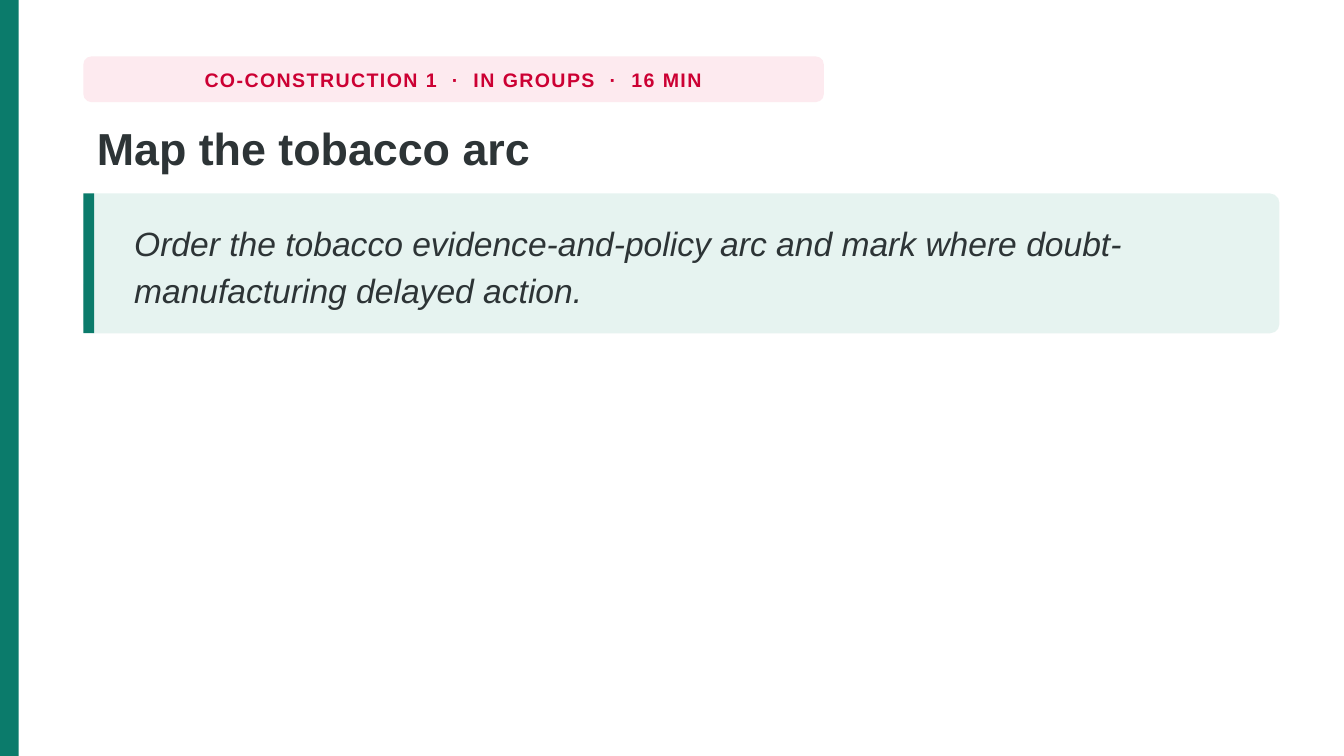
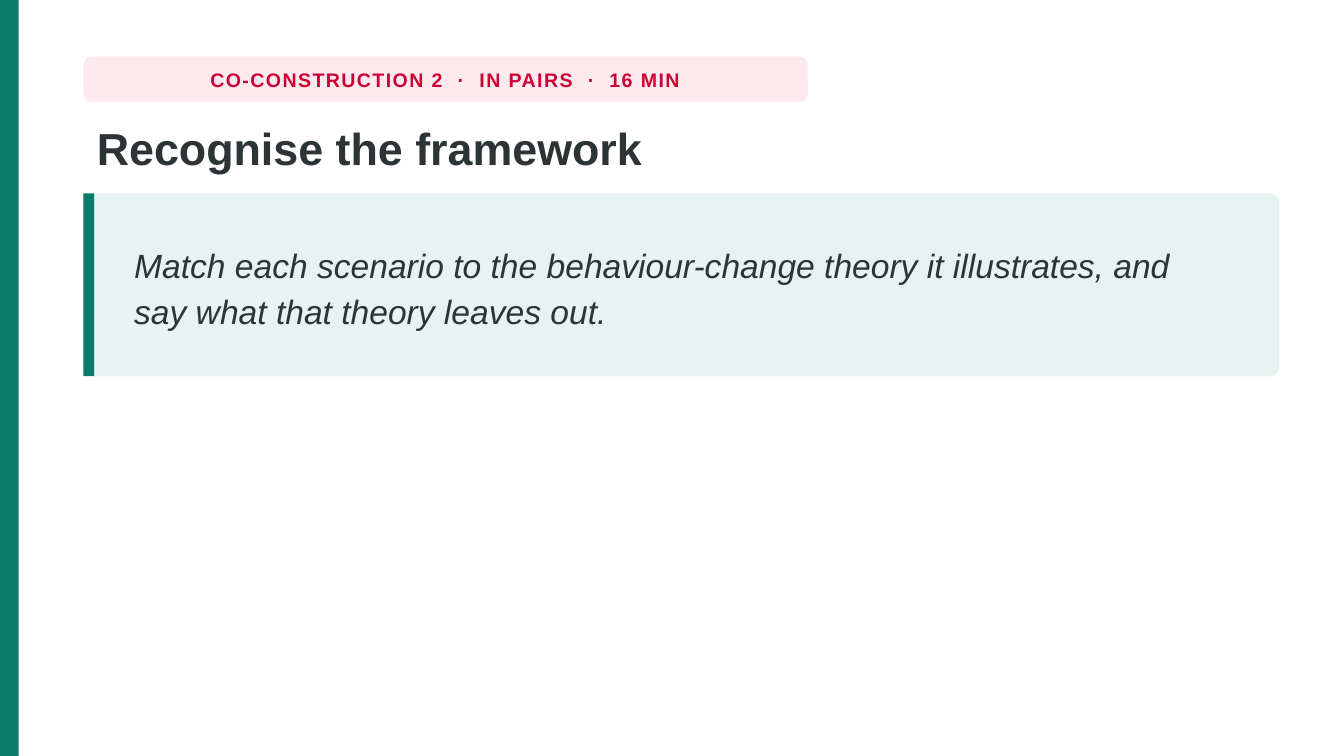
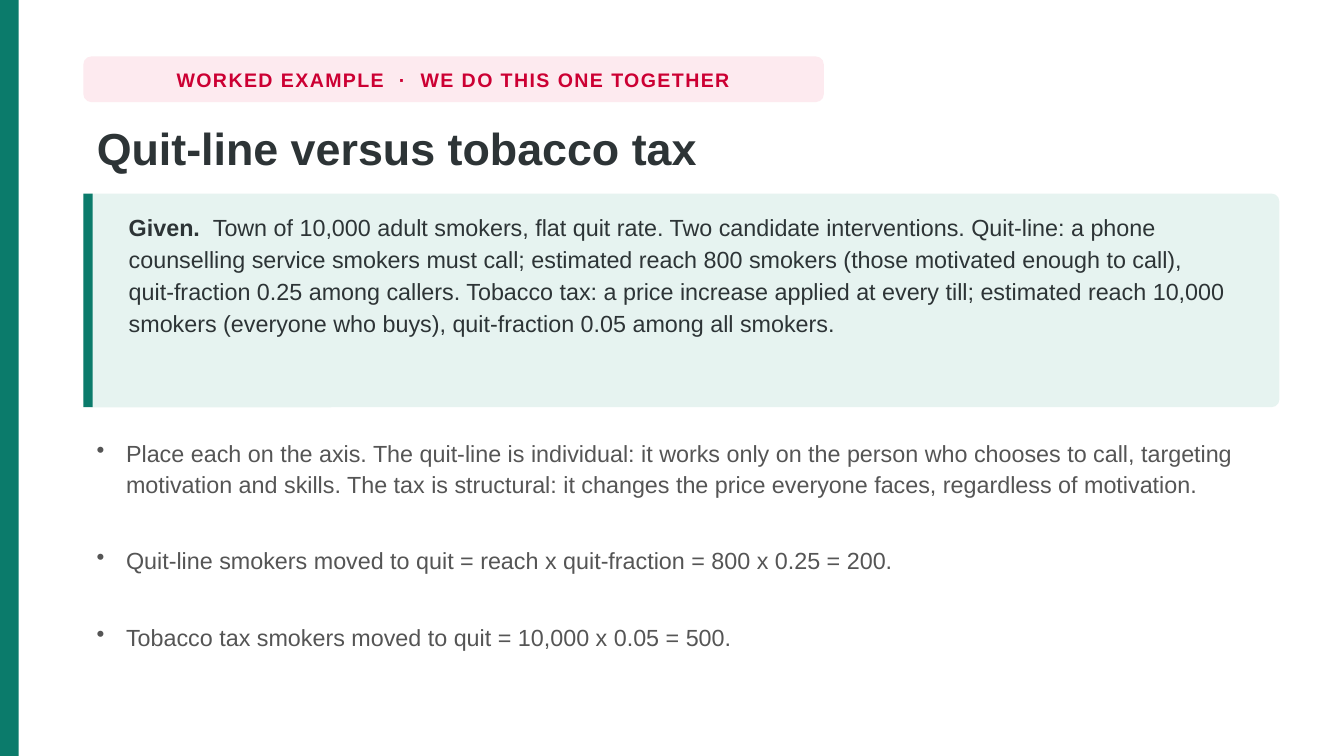
from lxml.etree import SubElement
from pptx import Presentation
from pptx.dml.color import RGBColor
from pptx.enum.shapes import MSO_SHAPE
from pptx.enum.text import MSO_ANCHOR, MSO_AUTO_SIZE, PP_ALIGN
from pptx.oxml.ns import qn
from pptx.util import Inches, Pt

GREEN = RGBColor(0x0B, 0x7B, 0x6B)
MINT = RGBColor(0xE6, 0xF3, 0xF0)
PINK = RGBColor(0xFD, 0xEA, 0xEF)
CRIMSON = RGBColor(0xCC, 0x00, 0x33)
INK = RGBColor(0x2D, 0x34, 0x36)
GREY = RGBColor(0x55, 0x55, 0x55)

TASKS = [
    {
        "tags": ["CO-CONSTRUCTION 1", "IN GROUPS", "16 MIN"],
        "tag_width": 5.51,
        "title": "Map the tobacco arc",
        "card": "prompt",
        "card_height": 1.04,
        "spans": [("Order the tobacco evidence-and-policy arc and mark where "
                   "doubt-manufacturing delayed action.", False)],
    },
    {
        "tags": ["CO-CONSTRUCTION 2", "IN PAIRS", "16 MIN"],
        "tag_width": 5.39,
        "title": "Recognise the framework",
        "card": "prompt",
        "card_height": 1.36,
        "spans": [("Match each scenario to the behaviour-change theory it illustrates, "
                   "and say what that theory leaves out.", False)],
    },
    {
        "tags": ["WORKED EXAMPLE", "WE DO THIS ONE TOGETHER"],
        "tag_width": 5.51,
        "title": "Quit-line versus tobacco tax",
        "card": "given",
        "card_height": 1.59,
        "spans": [
            ("Given.  ", True),
            ("Town of 10,000 adult smokers, flat quit rate. Two candidate interventions. "
             "Quit-line: a phone counselling service smokers must call; estimated reach 800 "
             "smokers (those motivated enough to call), quit-fraction 0.25 among callers. "
             "Tobacco tax: a price increase applied at every till; estimated reach 10,000 "
             "smokers (everyone who buys), quit-fraction 0.05 among all smokers.", False),
        ],
        "steps": [
            ("Place each on the axis. The quit-line is individual: it works only on the person "
             "who chooses to call, targeting motivation and skills. The tax is structural: it "
             "changes the price everyone faces, regardless of motivation.", 0.72),
            ("Quit-line smokers moved to quit = reach x quit-fraction = 800 x 0.25 = 200.", 0.49),
            ("Tobacco tax smokers moved to quit = 10,000 x 0.05 = 500.", 0.27),
        ],
    },
]

FONT = "Arial"
LEFT, WIDTH = 0.62, 8.9
TAG_TOP, TAG_HEIGHT = 0.42, 0.34
TITLE_TOP, TITLE_HEIGHT = 0.84, 0.56
CARD_TOP = 1.44
STEPS_GAP, STEP_GAP, STEP_INDENT = 0.16, 0.08, 0.22
PAGE_HEIGHT = Inches(10) * 9 // 16

TAG_FONT = {"name": FONT, "size": Pt(10.5), "bold": True}
TITLE_FONT = {"name": FONT, "size": Pt(24), "bold": True}
STEP_FONT = {"name": FONT, "size": Pt(12.5)}
CARDS = {
    "prompt": {
        "stripe": 0.08, "radius": 0.07, "inset": 0.28, "pad": 0.05, "text_width": 8.35,
        "anchor": MSO_ANCHOR.MIDDLE, "spacing": 1.16,
        "font": {"name": FONT, "size": Pt(18), "italic": True},
    },
    "given": {
        "stripe": 0.07, "radius": 0.06, "inset": 0.24, "pad": 0.07, "text_width": 8.4,
        "anchor": MSO_ANCHOR.TOP, "spacing": 1.14,
        "font": {"name": FONT, "size": Pt(12.5)},
    },
}


def set_font(font, values, color):
    for name, value in values.items():
        setattr(font, name, value)
    font.color.rgb = color


def add_panel(page, left, top, width, height, color, radius=0):
    """Add a plain filled rectangle, rounded when a radius in inches is given."""
    kind = MSO_SHAPE.ROUNDED_RECTANGLE if radius else MSO_SHAPE.RECTANGLE
    panel = page.shapes.add_shape(kind, *map(Inches, (left, top, width, height)))
    if radius:
        panel.adjustments[0] = radius / min(width, height)
    panel.fill.solid()
    panel.fill.fore_color.rgb = color
    panel.line.fill.background()
    panel.shadow.inherit = False
    return panel


def add_text(page, left, top, width, height, anchor=MSO_ANCHOR.TOP, wrap=True):
    """Add an empty text box and return its first paragraph."""
    box = page.shapes.add_textbox(*map(Inches, (left, top, width, height)))
    box.text_frame.word_wrap = wrap
    box.text_frame.vertical_anchor = anchor
    return box.text_frame.paragraphs[0]


def add_span(para, text, values, color):
    span = para.add_run()
    span.text = text
    set_font(span.font, values, color)
    return span


def add_band(page):
    add_panel(page, 0, 0, 0.14, 1, GREEN).height = PAGE_HEIGHT


def add_tag(page, tags, width):
    area = (LEFT, TAG_TOP, width, TAG_HEIGHT)
    add_panel(page, *area, PINK, radius=0.06)
    para = add_text(page, *area, anchor=MSO_ANCHOR.MIDDLE, wrap=False)
    para.alignment = PP_ALIGN.CENTER
    span = add_span(para, "  ·  ".join(tags), TAG_FONT, CRIMSON)
    span.font._element.set("spc", "80")


def set_title(page, text):
    title = page.shapes.title
    title.left, title.top = Inches(LEFT), Inches(TITLE_TOP)
    title.width, title.height = Inches(WIDTH), Inches(TITLE_HEIGHT)
    frame = title.text_frame
    frame.auto_size = MSO_AUTO_SIZE.NONE
    frame.word_wrap = True
    frame.vertical_anchor = MSO_ANCHOR.TOP
    para = frame.paragraphs[0]
    para.alignment = PP_ALIGN.LEFT
    para.line_spacing = 1.02
    add_span(para, text, TITLE_FONT, INK)


def add_card(page, style, height, spans):
    add_panel(page, LEFT, CARD_TOP, WIDTH, height, MINT, style["radius"])
    add_panel(page, LEFT, CARD_TOP, style["stripe"], height, GREEN)
    pad = style["pad"]
    para = add_text(page, LEFT + style["inset"], CARD_TOP + pad,
                    style["text_width"], height - 2 * pad, style["anchor"])
    para.line_spacing = style["spacing"]
    for text, bold in spans:
        add_span(para, text, {**style["font"], "bold": bold}, INK)


def add_steps(page, top, steps):
    for text, height in steps:
        para = add_text(page, LEFT, top, WIDTH, height)
        props = para._p.get_or_add_pPr()
        props.set("marL", str(Inches(STEP_INDENT)))
        props.set("indent", str(-Inches(STEP_INDENT)))
        SubElement(props, qn("a:buChar")).set("char", "•")
        para.line_spacing = 1.12
        add_span(para, text, STEP_FONT, GREY)
        top += height + STEP_GAP


def main():
    deck = Presentation()
    deck.slide_width, deck.slide_height = Inches(10), PAGE_HEIGHT
    title_only = deck.slide_layouts[5]
    for task in TASKS:
        page = deck.slides.add_slide(title_only)
        add_band(page)
        add_tag(page, task["tags"], task["tag_width"])
        set_title(page, task["title"])
        add_card(page, CARDS[task["card"]], task["card_height"], task["spans"])
        add_steps(page, CARD_TOP + task["card_height"] + STEPS_GAP, task.get("steps", []))
    deck.save("out.pptx")


if __name__ == "__main__":
    main()
